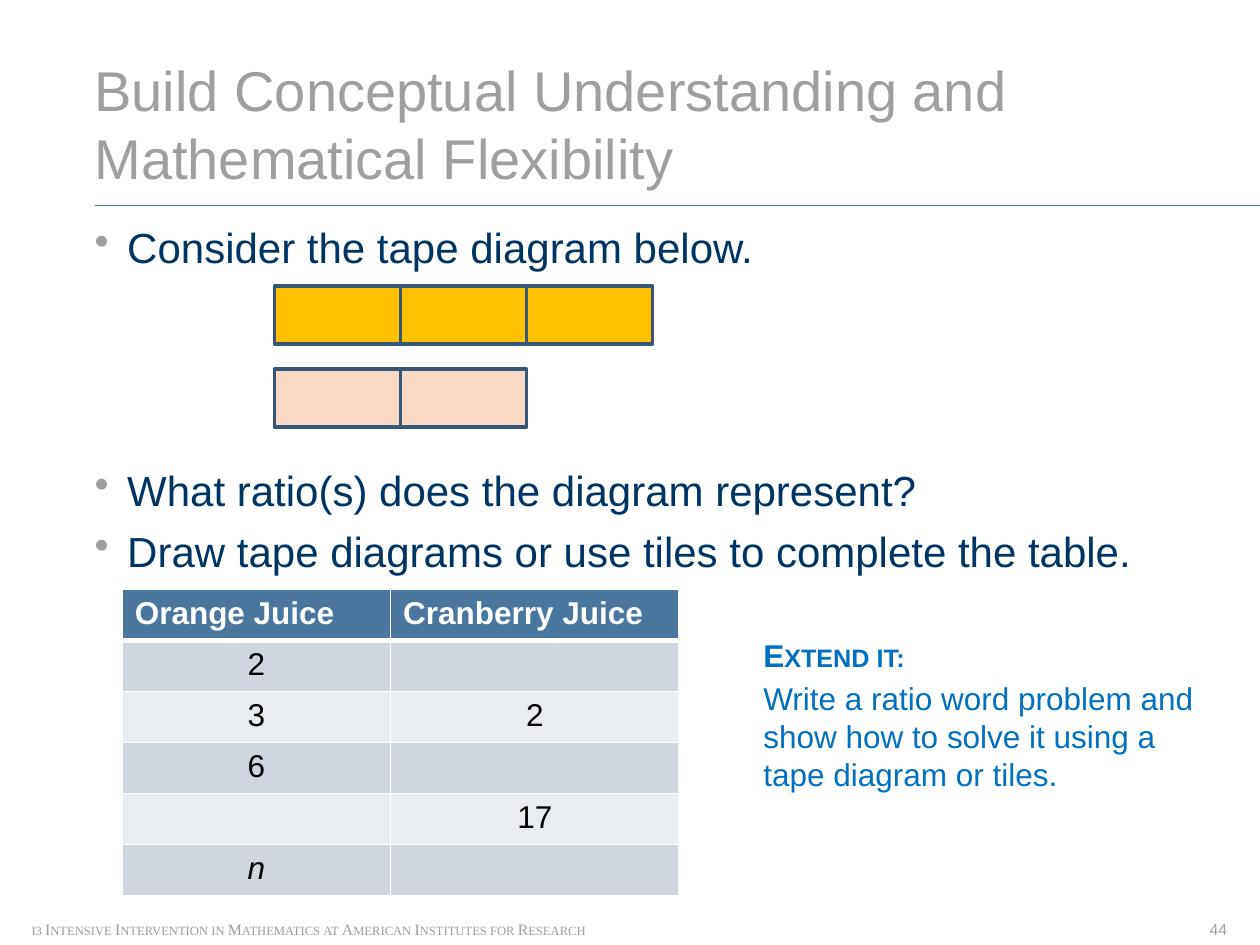
from lxml import etree
from pptx import Presentation
from pptx.dml.color import RGBColor
from pptx.enum.shapes import MSO_CONNECTOR, MSO_SHAPE
from pptx.enum.text import MSO_ANCHOR, PP_ALIGN
from pptx.oxml.ns import qn
from pptx.util import Inches, Pt

LINE, RECT = MSO_CONNECTOR.STRAIGHT, MSO_SHAPE.RECTANGLE
TOP, BOTTOM = MSO_ANCHOR.TOP, MSO_ANCHOR.BOTTOM
LEFT, CENTER, RIGHT = PP_ALIGN.LEFT, PP_ALIGN.CENTER, PP_ALIGN.RIGHT

COLORS = {
    "gray": "9F9F9F", "navy": "003462", "blue": "4B76A0", "link": "0070C0",
    "edge": "375776", "orange": "FFC000", "pink": "F8D9C6",
    "dark": "D0D6DF", "light": "E9ECF0", "white": "FFFFFF", "black": "000000",
}
COLOR = {name: RGBColor.from_string(code) for name, code in COLORS.items()}


def add_box(x, y, w, h, inset=0, wrap=True, anchor=TOP):
    frame = slide.shapes.add_textbox(
        Inches(x), Inches(y), Inches(w), Inches(h)).text_frame
    frame.word_wrap, frame.vertical_anchor = wrap, anchor
    frame.margin_left = frame.margin_right = Inches(inset)
    frame.margin_top = frame.margin_bottom = Inches(inset / 2)
    return frame


def put_text(para, text, size, color, align=LEFT, small=False, **form):
    para.alignment = align
    run = para.add_run()
    run.text = text
    form = {"name": "Arial", "size": Pt(size), **form}
    for key, value in form.items():
        setattr(run.font, key, value)
    run.font.color.rgb = COLOR[color]
    if small:
        run.font._element.set("cap", "small")


deck = Presentation()
deck.slide_width, deck.slide_height = Inches(10), Inches(7.5)
slide = deck.slides.add_slide(deck.slide_layouts[6])

# Footer and page number
foot = add_box(0.25, 7.3, 4.51, 0.15, wrap=False)
put_text(foot.paragraphs[0],
         "i3 Intensive Intervention in Mathematics at American Institutes for Research",
         9, "gray", small=True, name="Times New Roman")
page = add_box(9.59, 7.3, 0.15, 0.15, wrap=False)
put_text(page.paragraphs[0], "44", 9, "gray", RIGHT)

# Title and rule
title = add_box(0.75, 0.43, 8.99, 1.08, anchor=BOTTOM)
put_text(title.paragraphs[0],
         "Build Conceptual Understanding and Mathematical Flexibility", 32, "gray")
rule = slide.shapes.add_connector(
    LINE, Inches(0.75), Inches(1.63), Inches(10), Inches(1.63))
rule.line.color.rgb, rule.line.width = COLOR["blue"], Pt(0.5)
etree.SubElement(rule._element.spPr, qn("a:effectLst"))

# Bullets, with room for the tape diagram after the first
points = [
    ("Consider the tape diagram below.", 0),
    ("What ratio(s) does the diagram represent?", 110),
    ("Draw tape diagrams or use tiles to complete the table.", 6),
]
body = add_box(0.75, 1.76, 8.99, 5.17)
for i, (text, gap) in enumerate(points):
    para = body.add_paragraph() if i else body.paragraphs[0]
    props = para._p.get_or_add_pPr()
    props.set("marL", str(Inches(0.26)))
    props.set("indent", str(-Inches(0.26)))
    tint = etree.SubElement(props, qn("a:buClr"))
    etree.SubElement(tint, qn("a:srgbClr"), val=COLORS["gray"])
    etree.SubElement(props, qn("a:buChar"), char="•")
    if gap:
        para.space_before = Pt(gap)
    put_text(para, text, 24, "navy")

# Juice table
rows = [
    ("Orange Juice", "Cranberry Juice"),
    ("2", ""), ("3", "2"), ("6", ""), ("", "17"), ("n", ""),
]
table = slide.shapes.add_table(
    len(rows), 2, Inches(0.97), Inches(4.68), Inches(4.42), Inches(2.43)).table
for col, width in zip(table.columns, (2.13, 2.29)):
    col.width = Inches(width)
for r, row in enumerate(rows):
    table.rows[r].height = Inches(2.43 / len(rows))
    head = r == 0
    fill = "blue" if head else "dark" if r % 2 else "light"
    for c, text in enumerate(row):
        cell = table.cell(r, c)
        props = cell._tc.get_or_add_tcPr()
        for side in ("lnL", "lnR", "lnT", "lnB"):
            thick = (head and side == "lnB") or (r == 1 and side == "lnT")
            edge = etree.SubElement(
                props, qn("a:" + side), w=str(Pt(3 if thick else 1)))
            solid = etree.SubElement(edge, qn("a:solidFill"))
            etree.SubElement(solid, qn("a:srgbClr"), val=COLORS["white"])
        cell.fill.solid()
        cell.fill.fore_color.rgb = COLOR[fill]
        if text:
            put_text(cell.text_frame.paragraphs[0], text, 18,
                     "white" if head else "black", LEFT if head else CENTER,
                     bold=head, italic=text == "n")

# Tape diagram
for count, y, fill in ((3, 2.27, "orange"), (2, 2.93, "pink")):
    for i in range(count):
        tile = slide.shapes.add_shape(
            RECT, Inches(2.18 + i), Inches(y), Inches(1), Inches(0.46))
        tile.shadow.inherit = False
        tile.fill.solid()
        tile.fill.fore_color.rgb = COLOR[fill]
        tile.line.color.rgb, tile.line.width = COLOR["edge"], Pt(2)

# Extension task
task = add_box(5.96, 5, 3.63, 1.35, inset=0.1)
lead = task.paragraphs[0]
lead.space_after = Pt(3)
put_text(lead, "Extend it:", 18, "link", small=True, bold=True)
put_text(task.add_paragraph(),
         "Write a ratio word problem and show how to solve it using a "
         "tape diagram or tiles.", 18, "link")

deck.save("out.pptx")
